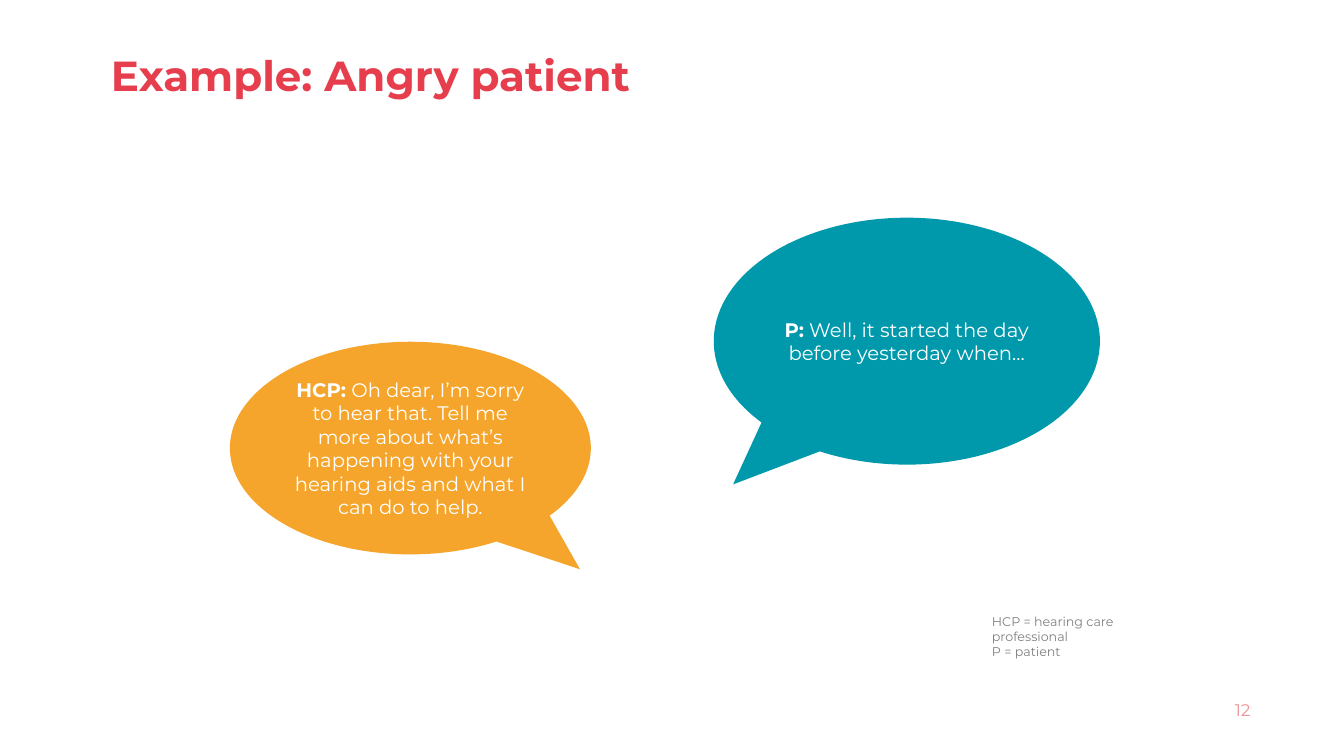
from dataclasses import dataclass

from pptx import Presentation
from pptx.dml.color import RGBColor
from pptx.enum import shapes, text
from pptx.util import Inches, Pt

WIDTH, HEIGHT = 13.33, 7.5


@dataclass(frozen=True)
class Theme:
    font: str = "Montserrat"
    red: str = "E63E4D"
    pink: str = "ED9297"
    orange: str = "F5A52B"
    teal: str = "0099AC"
    grey: str = "808080"
    white: str = "FFFFFF"
    title_size: int = 30
    speech_size: int = 14
    number_size: int = 12
    note_size: int = 9


THEME = Theme()


def box(left, top, width, height):
    return [Inches(length) for length in (left, top, width, height)]


def style(paragraph, size, color, align=text.PP_ALIGN.LEFT, bold=False):
    paragraph.alignment = align
    paragraph.font.name = THEME.font
    paragraph.font.size = Pt(size)
    paragraph.font.bold = bold
    paragraph.font.color.rgb = RGBColor.from_string(color)


def set_title(slide, wording, area):
    title = slide.shapes.title
    title.left, title.top, title.width, title.height = area
    frame = title.text_frame
    frame.text = wording
    frame.vertical_anchor = text.MSO_ANCHOR.MIDDLE
    frame.auto_size = text.MSO_AUTO_SIZE.NONE
    heading = frame.paragraphs[0]
    heading.line_spacing = 0.9
    style(heading, THEME.title_size, THEME.red, bold=True)


def add_speech(slide, speaker, words, area, tail, color):
    """Add a bubble; tail is the tip's offset from the centre, in shares of its size."""
    bubble = slide.shapes.add_shape(
        shapes.MSO_SHAPE.OVAL_CALLOUT, *area)
    bubble.adjustments[0], bubble.adjustments[1] = tail
    bubble.shadow.inherit = False
    bubble.fill.solid()
    bubble.fill.fore_color.rgb = RGBColor.from_string(color)
    bubble.line.fill.background()
    frame = bubble.text_frame
    frame.word_wrap = True
    frame.vertical_anchor = text.MSO_ANCHOR.MIDDLE
    line = frame.paragraphs[0]
    style(line, THEME.speech_size, THEME.white, text.PP_ALIGN.CENTER)
    name = line.add_run()
    name.text = speaker
    name.font.bold = True
    line.add_run().text = " " + words


def add_label(slide, wording, area, size, color,
              align=text.PP_ALIGN.LEFT, anchor=text.MSO_ANCHOR.TOP):
    frame = slide.shapes.add_textbox(*area).text_frame
    frame.word_wrap = True
    frame.vertical_anchor = anchor
    frame.text = wording
    for paragraph in frame.paragraphs:
        style(paragraph, size, color, align)


def main():
    deck = Presentation()
    deck.slide_width, deck.slide_height = Inches(WIDTH), Inches(HEIGHT)
    slide = deck.slides.add_slide(deck.slide_layouts[5])

    set_title(slide, "Example: Angry patient", box(1, 0.46, 11.5, 0.63))
    add_speech(
        slide, "HCP:",
        "Oh dear, I’m sorry to hear that. Tell me more about what’s "
        "happening with your hearing aids and what I can do to help.",
        box(2.28, 3.39, 3.58, 2.11), (0.47, 0.57), THEME.orange)
    add_speech(
        slide, "P:", "Well, it started the day before yesterday when…",
        box(7.08, 2.16, 3.83, 2.45), (-0.45, 0.58), THEME.teal)
    add_label(slide, "HCP = hearing care professional\nP = patient",
              box(9.74, 6.04, 2.03, 0.4), THEME.note_size, THEME.grey)
    add_label(slide, "12", box(9.5, 6.84, 3, 0.4), THEME.number_size,
              THEME.pink, text.PP_ALIGN.RIGHT, text.MSO_ANCHOR.MIDDLE)

    deck.save("out.pptx")


if __name__ == "__main__":
    main()
